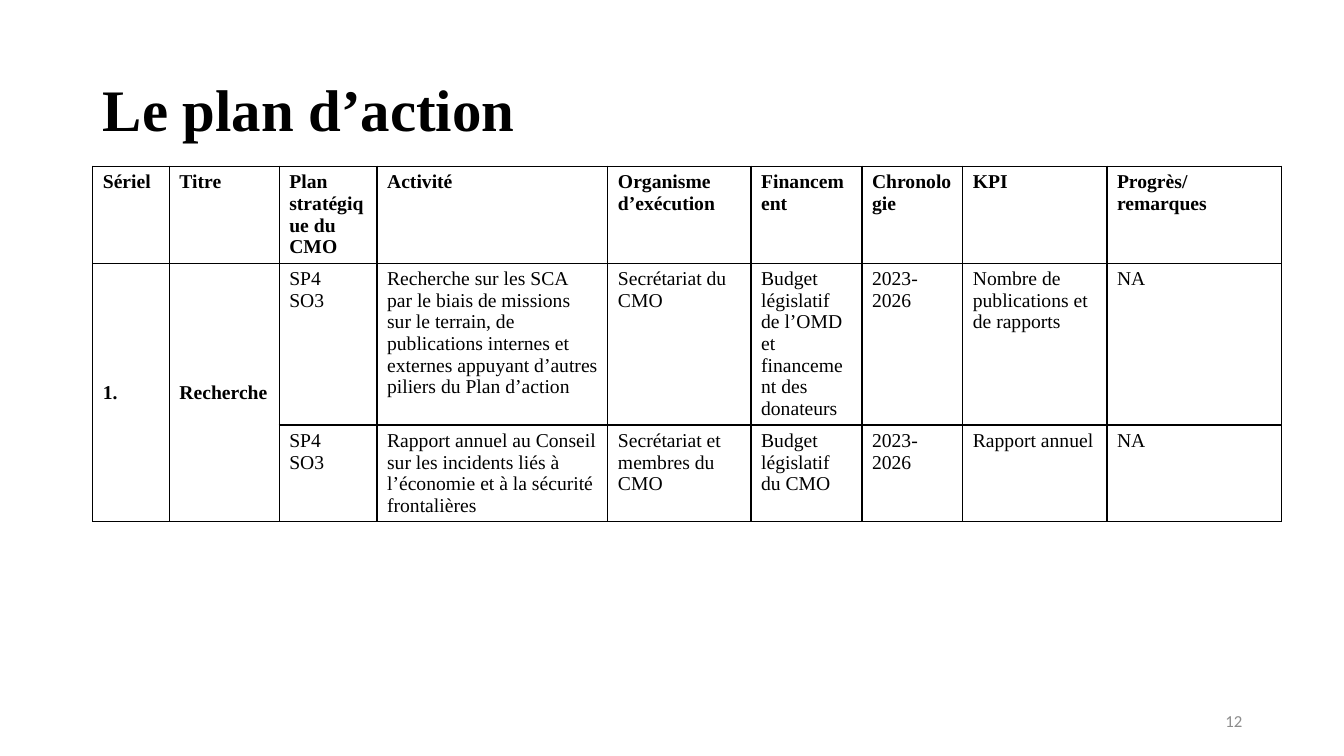
"""Build the action plan slide with its table of research activities."""
from dataclasses import dataclass

from lxml import etree
from pptx import Presentation
from pptx.dml.color import RGBColor
from pptx.enum.text import MSO_ANCHOR, MSO_AUTO_SIZE, PP_ALIGN
from pptx.oxml.ns import qn
from pptx.slide import Slide
from pptx.table import _Cell
from pptx.text.text import _Paragraph
from pptx.util import Inches, Pt

TOP, MIDDLE = MSO_ANCHOR.TOP, MSO_ANCHOR.MIDDLE
LEFT, RIGHT = PP_ALIGN.LEFT, PP_ALIGN.RIGHT
NO_AUTOFIT = MSO_AUTO_SIZE.NONE
TITLE_ONLY = 5


@dataclass(frozen=True)
class Theme:
    serif: str = "Times New Roman"
    sans: str = "Calibri"
    ink: str = "000000"
    muted: str = "8C8C8C"
    title_size: float = 42
    table_size: float = 14
    number_size: float = 12
    border_width: float = 1


@dataclass(frozen=True)
class Column:
    heading: str
    width: float


@dataclass(frozen=True)
class Activity:
    objectives: str
    description: str
    body: str
    funding: str
    period: str
    indicator: str
    progress: str

    def entries(self) -> list[str]:
        return [self.objectives, self.description, self.body, self.funding,
                self.period, self.indicator, self.progress]


THEME = Theme()
COLUMNS = [
    Column("Sériel", 0.76),
    Column("Titre", 1.09),
    Column("Plan stratégique du CMO", 0.97),
    Column("Activité", 2.29),
    Column("Organisme d’exécution", 1.42),
    Column("Financement", 1.1),
    Column("Chronologie", 1),
    Column("KPI", 1.43),
    Column("Progrès/remarques", 1.73),
]
PILLAR = ["1.", "Recherche"]
ACTIVITIES = [
    Activity(
        "SP4\nSO3",
        "Recherche sur les SCA par le biais de missions sur le terrain, de publications "
        "internes et externes appuyant d’autres piliers du Plan d’action",
        "Secrétariat du CMO",
        "Budget législatif de l’OMD et financement des donateurs",
        "2023-2026", "Nombre de publications et de rapports", "NA"),
    Activity(
        "SP4\nSO3",
        "Rapport annuel au Conseil sur les incidents liés à l’économie "
        "et à la sécurité frontalières",
        "Secrétariat et membres du CMO",
        "Budget législatif du CMO",
        "2023-2026", "Rapport annuel", "NA"),
]
ROW_HEIGHTS = [0.6, 1.35, 0.43]
TABLE_HEIGHT = 3.18
MARGIN = 0.92


def add_text(paragraph: _Paragraph, text: str, size: float, font: str,
             color: str, bold: bool = False) -> None:
    run = paragraph.add_run()
    run.text = text
    run.font.size = Pt(size)
    run.font.name = font
    run.font.bold = bold
    run.font.color.rgb = RGBColor.from_string(color)


def add_borders(cell: _Cell) -> None:
    properties = cell._tc.get_or_add_tcPr()
    for side in ("a:lnL", "a:lnR", "a:lnT", "a:lnB"):
        border = etree.SubElement(properties, qn(side), w=str(Pt(THEME.border_width)))
        fill = etree.SubElement(border, qn("a:solidFill"))
        etree.SubElement(fill, qn("a:srgbClr"), val=THEME.ink)


def fill_cell(cell: _Cell, text: str, bold: bool = False,
              anchor: MSO_ANCHOR = TOP) -> None:
    cell.vertical_anchor = anchor
    frame = cell.text_frame
    for index, line in enumerate(text.split("\n")):
        paragraph = frame.add_paragraph() if index else frame.paragraphs[0]
        add_text(paragraph, line, THEME.table_size, THEME.serif, THEME.ink, bold)


def add_title(slide: Slide) -> None:
    title = slide.shapes.title
    title.left, title.top = Inches(MARGIN), Inches(0.59)
    title.width, title.height = Inches(11.5), Inches(1.05)
    frame = title.text_frame
    frame.auto_size = NO_AUTOFIT
    frame.vertical_anchor = MIDDLE
    heading = frame.paragraphs[0]
    heading.alignment = LEFT
    heading.line_spacing = 0.9
    add_text(heading, "Le plan d’action", THEME.title_size, THEME.serif, THEME.ink, True)


def add_plan(slide: Slide) -> None:
    plan_frame = slide.shapes.add_table(
        len(ROW_HEIGHTS), len(COLUMNS), Inches(MARGIN), Inches(1.65),
        Inches(11.78), Inches(TABLE_HEIGHT))
    plan = plan_frame.table
    plan.first_row = plan.horz_banding = False
    for row, height in zip(plan.rows, ROW_HEIGHTS):
        row.height = Inches(height)
    for cell in plan.iter_cells():
        add_borders(cell)
        cell.fill.background()
    for index, column in enumerate(COLUMNS):
        plan.columns[index].width = Inches(column.width)
        fill_cell(plan.cell(0, index), column.heading, bold=True)
    for index, label in enumerate(PILLAR):
        pillar_cell = plan.cell(1, index)
        pillar_cell.merge(plan.cell(len(ACTIVITIES), index))
        fill_cell(pillar_cell, label, bold=True, anchor=MIDDLE)
    for row_index, activity in enumerate(ACTIVITIES, start=1):
        for index, entry in enumerate(activity.entries(), start=len(PILLAR)):
            fill_cell(plan.cell(row_index, index), entry)
    plan_frame.height = Inches(TABLE_HEIGHT)


def add_page_number(slide: Slide) -> None:
    page_number = slide.shapes.add_textbox(
        Inches(9.42), Inches(6.95), Inches(3), Inches(0.4))
    frame = page_number.text_frame
    frame.word_wrap = True
    frame.vertical_anchor = MIDDLE
    frame.paragraphs[0].alignment = RIGHT
    add_text(frame.paragraphs[0], "12", THEME.number_size, THEME.sans, THEME.muted)


def main() -> None:
    deck = Presentation()
    deck.slide_width, deck.slide_height = Inches(13.33), Inches(7.5)
    slide = deck.slides.add_slide(deck.slide_layouts[TITLE_ONLY])
    add_title(slide)
    add_plan(slide)
    add_page_number(slide)
    deck.save("out.pptx")


if __name__ == "__main__":
    main()
